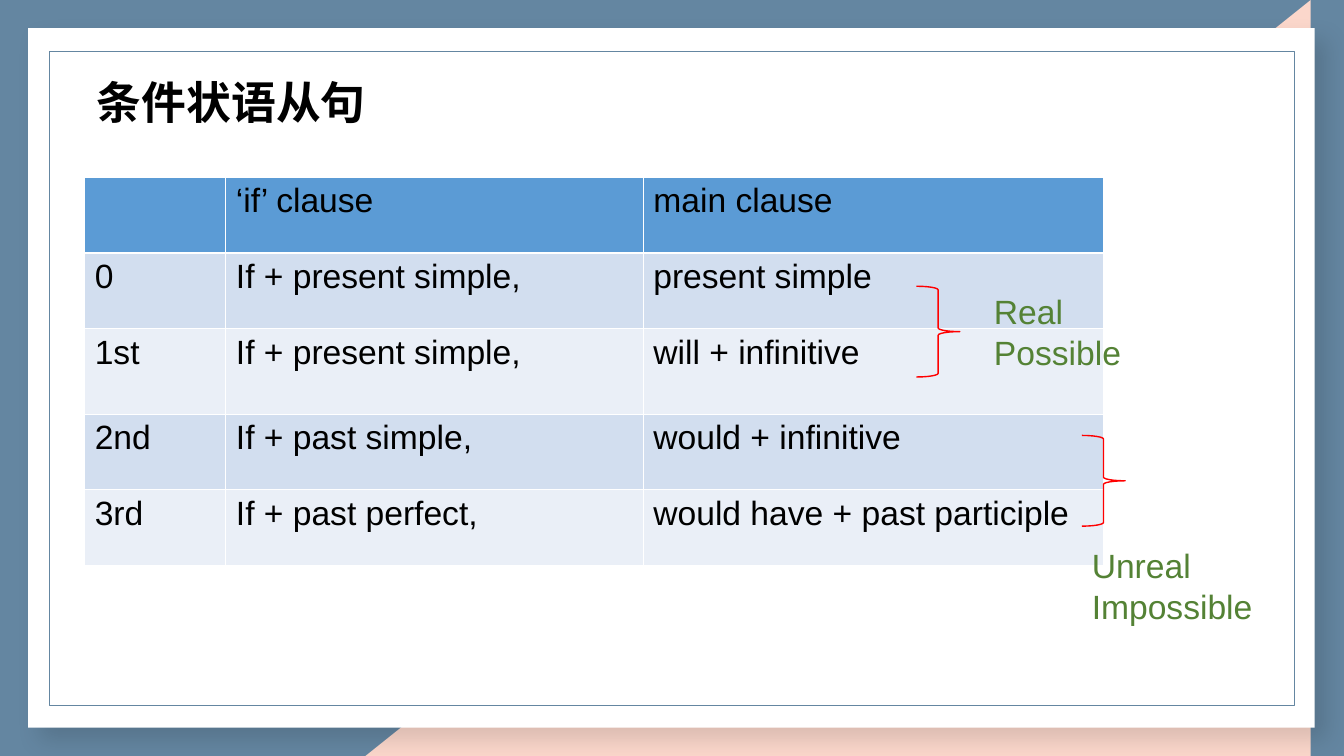
from dataclasses import dataclass

from lxml.etree import SubElement
from pptx import Presentation
from pptx.dml.color import RGBColor
from pptx.enum.shapes import MSO_SHAPE
from pptx.enum.text import MSO_ANCHOR, PP_ALIGN
from pptx.oxml.ns import qn
from pptx.shapes.base import BaseShape
from pptx.slide import Slide
from pptx.text.text import TextFrame
from pptx.util import Inches, Pt


@dataclass(frozen=True)
class Theme:
    font: str = "Arial"
    head: int = 32
    body: int = 24
    black: str = "000000"
    white: str = "FFFFFF"
    slate: str = "6486A1"
    peach: str = "FBD7CB"
    blue: str = "5B9BD5"
    bands: tuple[str, str] = ("D2DEEF", "EAEFF7")
    red: str = "FF0000"
    green: str = "548235"


@dataclass(frozen=True)
class Box:
    left: float
    top: float
    width: float
    height: float

    def span(self) -> tuple[int, ...]:
        return tuple(Inches(n) for n in (self.left, self.top, self.width, self.height))


@dataclass(frozen=True)
class Group:
    brace: Box
    label: Box
    words: tuple[str, str]


THEME = Theme()
GRID = Box(0.84, 1.76, 10.11, 3.85)
COLS = (1.4, 4.14, 4.57)
ROWS = (0.75, 0.75, 0.85, 0.75, 0.75)
CELLS = (
    ("", "‘if’ clause", "main clause"),
    ("0", "If + present simple,", "present simple"),
    ("1st", "If + present simple,", "will + infinitive"),
    ("2nd", "If + past simple,", "would + infinitive"),
    ("3rd", "If + past perfect,", "would have + past participle"),
)
GROUPS = (
    Group(Box(9.09, 2.84, 0.43, 0.9), Box(9.76, 2.84, 1.88, 0.91), ("Real", "Possible")),
    Group(Box(10.73, 4.32, 0.43, 0.9), Box(10.73, 5.36, 1.88, 0.91), ("Unreal", "Impossible")),
)


def rgb(code: str) -> RGBColor:
    return RGBColor.from_string(code)


def paint(shape: BaseShape, fill: str | None = None, line: str | None = None) -> None:
    shape.shadow.inherit = False
    if fill:
        shape.fill.solid()
        shape.fill.fore_color.rgb = rgb(fill)
    else:
        shape.fill.background()
    if line:
        shape.line.color.rgb = rgb(line)
        shape.line.width = Pt(1)
    else:
        shape.line.fill.background()


def draw(slide: Slide, kind: MSO_SHAPE, box: Box,
         fill: str | None = None, line: str | None = None) -> BaseShape:
    shape = slide.shapes.add_shape(kind, *box.span())
    paint(shape, fill, line)
    return shape


def write(frame: TextFrame, lines: tuple[str, ...], size: int, color: str,
          bold: bool = False) -> None:
    for i, line in enumerate(lines):
        para = frame.paragraphs[0] if i == 0 else frame.add_paragraph()
        para.alignment = PP_ALIGN.LEFT
        run = para.add_run()
        run.text = line
        run.font.name = THEME.font
        run.font.size = Pt(size)
        run.font.bold = bold
        run.font.color.rgb = rgb(color)


def shade(shape: BaseShape) -> None:
    list_ = shape.element.spPr.find(qn("a:effectLst"))
    glow = SubElement(list_, qn("a:outerShdw"), blurRad=str(Pt(17)), dist=str(Pt(12)),
                      dir=str(45 * 60000), algn="tl", rotWithShape="0")
    color = SubElement(glow, qn("a:srgbClr"), val=THEME.black)
    SubElement(color, qn("a:alpha"), val="13000")


def add_frame(slide: Slide) -> None:
    draw(slide, MSO_SHAPE.RECTANGLE, Box(0, 0, 13.33, 7.5), THEME.slate)
    path = slide.shapes.build_freeform(13.33, 0, scale=Inches(1))
    path.add_line_segments([(13.33, 7.5), (3.35, 7.5)], close=True)
    paint(path.convert_to_shape(), THEME.peach)
    card = draw(slide, MSO_SHAPE.RECTANGLE, Box(0.28, 0.28, 12.76, 6.94), THEME.white)
    shade(card)
    draw(slide, MSO_SHAPE.RECTANGLE, Box(0.49, 0.51, 12.35, 6.49), THEME.white, THEME.slate)


def add_title(slide: Slide) -> None:
    title = slide.shapes.title
    title.left, title.top, title.width, title.height = Box(0.86, 0.66, 10.94, 0.7).span()
    title.text_frame.vertical_anchor = MSO_ANCHOR.MIDDLE
    write(title.text_frame, ("条件状语从句",), THEME.head, THEME.black, bold=True)
    # Bring the title in front of the card
    title.element.getparent().append(title.element)


def add_grid(slide: Slide) -> None:
    table = slide.shapes.add_table(len(ROWS), len(COLS), *GRID.span()).table
    for col, width in zip(table.columns, COLS):
        col.width = Inches(width)
    for r, (height, texts) in enumerate(zip(ROWS, CELLS)):
        table.rows[r].height = Inches(height)
        for c, text in enumerate(texts):
            cell = table.cell(r, c)
            cell.fill.solid()
            cell.fill.fore_color.rgb = rgb(THEME.bands[(r - 1) % 2] if r else THEME.blue)
            if text:
                write(cell.text_frame, (text,), THEME.body, THEME.black)


def add_group(slide: Slide, group: Group) -> None:
    draw(slide, MSO_SHAPE.RIGHT_BRACE, group.brace, line=THEME.red)
    label = slide.shapes.add_textbox(*group.label.span())
    label.text_frame.word_wrap = True
    write(label.text_frame, group.words, THEME.body, THEME.green)


def main() -> None:
    deck = Presentation()
    deck.slide_width, deck.slide_height = Inches(13.33), Inches(7.5)
    slide = deck.slides.add_slide(deck.slide_layouts[5])
    # Backdrop and title
    add_frame(slide)
    add_title(slide)
    # Clause table with its braces and labels
    add_grid(slide)
    for group in GROUPS:
        add_group(slide, group)
    deck.save("out.pptx")


if __name__ == "__main__":
    main()
